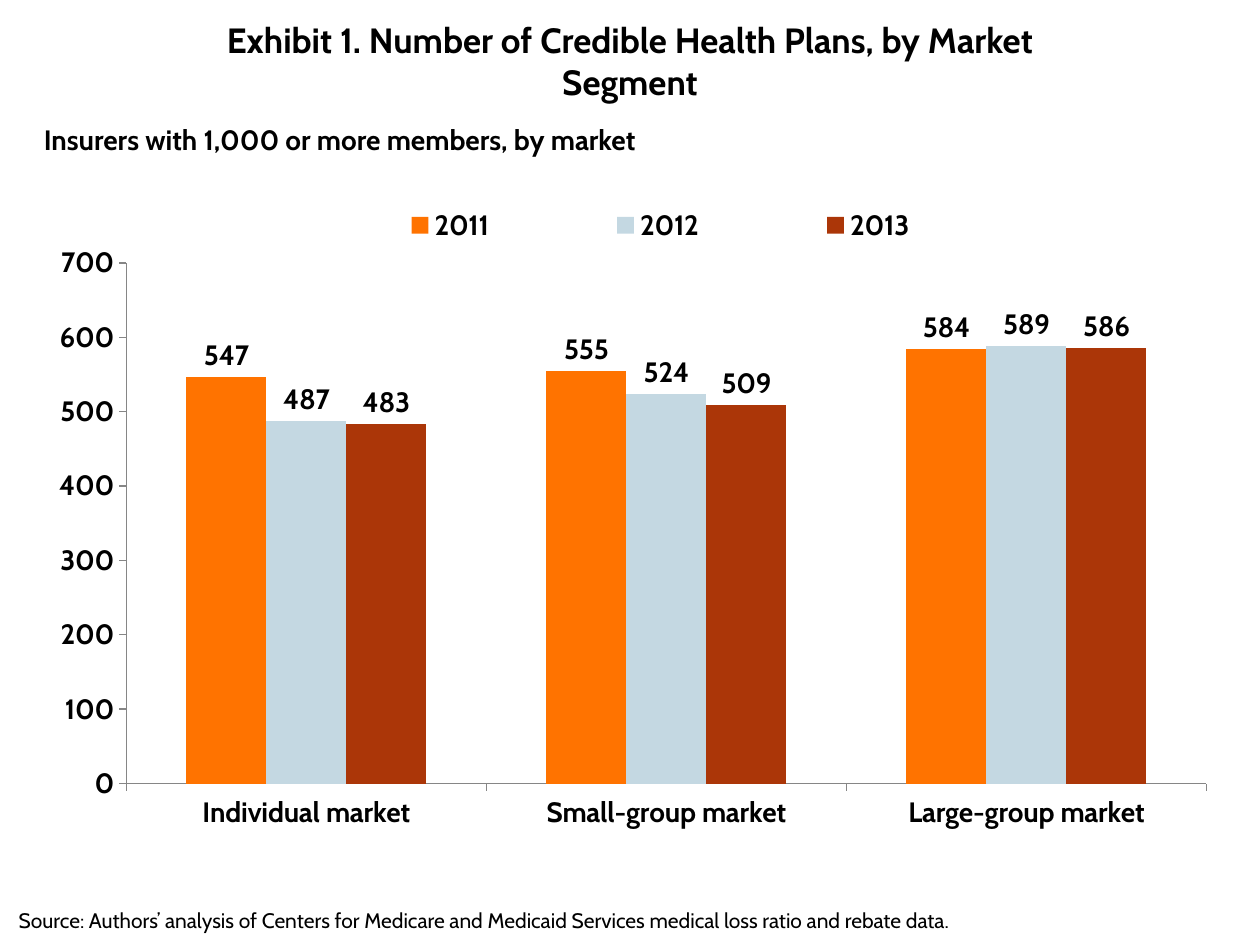
from lxml import etree
from pptx import Presentation, util as u
from pptx.chart.data import CategoryChartData
from pptx.dml.color import RGBColor
from pptx.enum import chart as ch, text as tx
from pptx.oxml.ns import qn

# Content: text, box in inches, style name
texts = [
    ("Exhibit 1. Number of Credible Health Plans, by Market Segment",
     (1.14, 0.1, 7.72, 0.44), "title"),
    ("Insurers with 1,000 or more members, by market",
     (0.25, 0.92, 4.97, 0.37), "label"),
    ("Source: Authors’ analysis of Centers for Medicare and Medicaid Services "
     "medical loss ratio and rebate data.", (0.05, 7.15, 7.68, 0.3), "note"),
]
markets = ["Individual market", "Small-group market", "Large-group market"]
plans = {"2011": (547, 555, 584), "2012": (487, 524, 589), "2013": (483, 509, 586)}
chart_box = (0.25, 1.5, 9.42, 5.25)
plot_box = (0.08, 0.112, 0.91, 0.787)
legend_box = (0.22, 0.02, 0.62, 0.07)

theme = {
    "font": "Cabin", "ink": "000000", "axis": "868686",
    "bars": ("FF7300", "C4D8E2", "AB3608"),
    "title": {"size": u.Pt(20), "bold": True},
    "label": {"size": u.Pt(16), "bold": True},
    "note": {"size": u.Pt(12), "bold": False},
}


def put(obj, vals):
    for name, val in vals.items():
        setattr(obj, name, val)


def style(font, kind):
    put(font, {"name": theme["font"], **theme[kind]})
    font.color.rgb = RGBColor.from_string(theme["ink"])


def place(node, index, box, inner=False):
    """Give a chart part a fixed layout, in fractions of the chart."""
    for old in node.findall(qn("c:layout")):
        node.remove(old)
    layout = etree.Element(qn("c:layout"))
    manual = etree.SubElement(layout, qn("c:manualLayout"))
    vals = [("layoutTarget", "inner")] if inner else []
    vals += [("xMode", "edge"), ("yMode", "edge")]
    vals += list(zip("xywh", box))
    for tag, val in vals:
        etree.SubElement(manual, qn("c:" + tag)).set("val", str(val))
    node.insert(index, layout)


prs = Presentation()
put(prs, {"slide_width": u.Inches(10), "slide_height": u.Inches(7.5)})
slide = prs.slides.add_slide(prs.slide_layouts[6])

# Chart
data = CategoryChartData()
data.categories = markets
for year, vals in plans.items():
    data.add_series(year, vals)
chart = slide.shapes.add_chart(ch.XL_CHART_TYPE.COLUMN_CLUSTERED,
                               *map(u.Inches, chart_box), data).chart
style(chart.font, "label")
put(chart, {"has_title": False, "has_legend": True})
area = chart.plots[0]
put(area, {"gap_width": 150, "overlap": 0, "vary_by_categories": False})
place(chart._chartSpace.chart.plotArea, 0, plot_box, inner=True)

# Legend
put(chart.legend, {"position": ch.XL_LEGEND_POSITION.RIGHT, "include_in_layout": False})
style(chart.legend.font, "label")
place(chart.legend._element, 1, legend_box)

# Axes
put(chart.value_axis, {"minimum_scale": 0, "maximum_scale": 700, "major_unit": 100})
for axis in (chart.category_axis, chart.value_axis):
    put(axis, {"has_major_gridlines": False,
               "major_tick_mark": ch.XL_TICK_MARK.OUTSIDE,
               "minor_tick_mark": ch.XL_TICK_MARK.NONE})
    style(axis.tick_labels.font, "label")
    axis.format.line.width = u.Pt(0.75)
    axis.format.line.color.rgb = RGBColor.from_string(theme["axis"])

# Bars and their values
for bar, color in zip(area.series, theme["bars"]):
    bar.format.fill.solid()
    bar.format.fill.fore_color.rgb = RGBColor.from_string(color)
    labels = bar.data_labels
    put(labels, {"show_value": True, "position": ch.XL_LABEL_POSITION.OUTSIDE_END})
    style(labels.font, "label")

# Title, subtitle and source
for words, box, kind in texts:
    frame = slide.shapes.add_textbox(*map(u.Inches, box)).text_frame
    put(frame, {"word_wrap": True, "auto_size": tx.MSO_AUTO_SIZE.SHAPE_TO_FIT_TEXT})
    para = frame.paragraphs[0]
    para.alignment = tx.PP_ALIGN.CENTER if kind == "title" else tx.PP_ALIGN.LEFT
    run = para.add_run()
    run.text = words
    style(run.font, kind)

prs.save("out.pptx")
